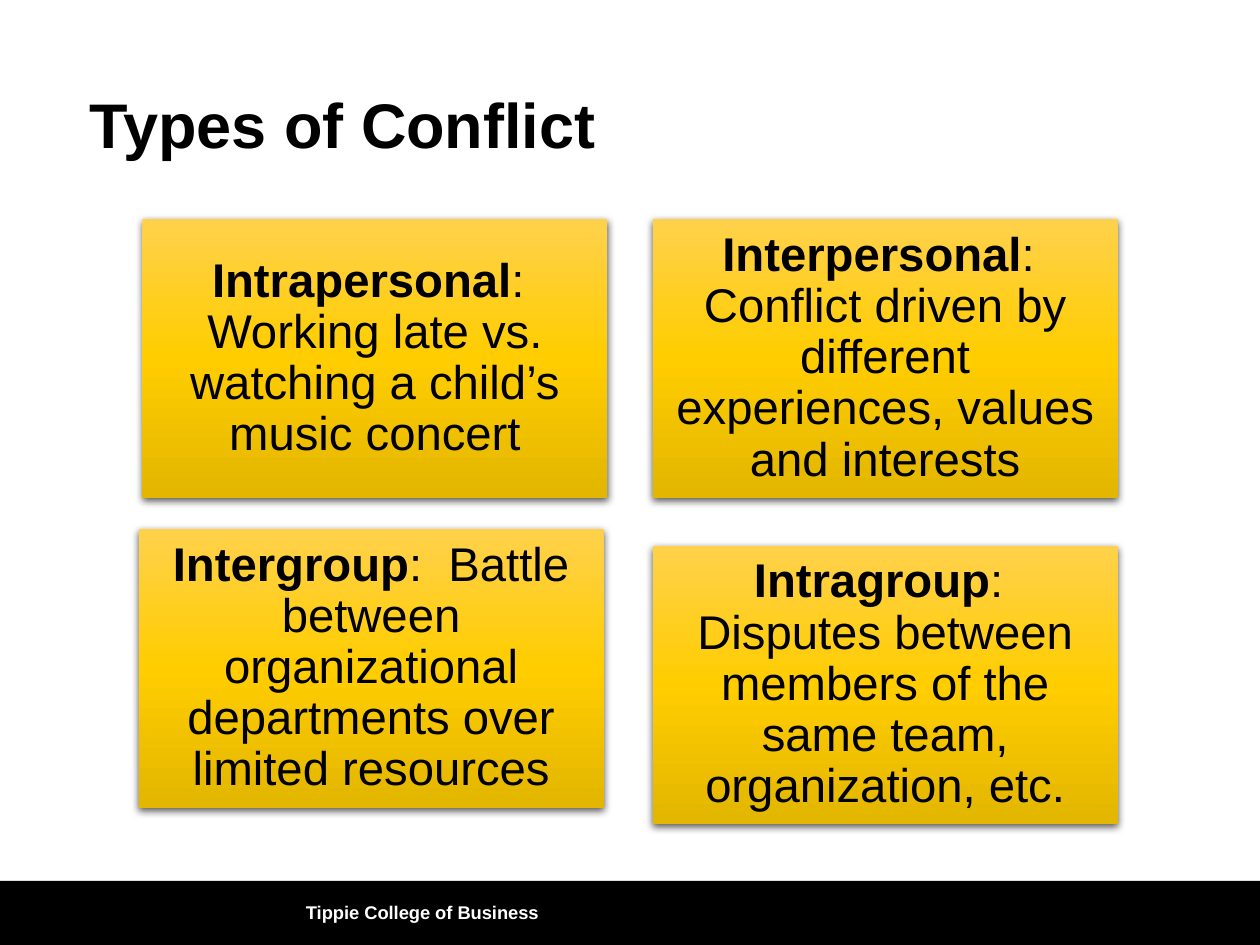
from copy import deepcopy

from lxml.etree import SubElement
from pptx import Presentation
from pptx.dml.color import RGBColor
from pptx.enum.shapes import MSO_SHAPE
from pptx.enum.text import MSO_ANCHOR, PP_ALIGN
from pptx.oxml.ns import qn
from pptx.util import Inches, Pt

BLACK = RGBColor(0, 0, 0)
WHITE = RGBColor(255, 255, 255)
GOLDS = [RGBColor(0xFF, 0xD1, 0x4B), RGBColor(0xFF, 0xCD, 0x00),
         RGBColor(0xE3, 0xB6, 0x00)]
FONT = "Arial"

TITLE = "Types of Conflict"
FOOTER = "Tippie College of Business"
# term, text, column, row, nudge from the grid in inches (x, y)
CARDS = [
    ("Intrapersonal", "Working late vs. watching a child’s music concert",
     0, 0, (0, 0)),
    ("Interpersonal",
     "Conflict driven by different experiences, values and interests",
     1, 0, (0, 0)),
    ("Intergroup",
     "Battle between organizational departments over limited resources",
     0, 1, (-0.03, -0.13)),
    ("Intragroup",
     "Disputes between members of the same team, organization, etc.",
     1, 1, (0, 0)),
]

# Card grid, in inches
LEFT, TOP = 1.13, 1.74
CARD_W, CARD_H = 3.69, 2.21
STEP_X, STEP_Y = 4.05, 2.59
INSET = 0.11
BAR_TOP = 6.99


def style(par, size, color, bold=None):
    font = par.font
    font.name, font.size, font.bold = FONT, Pt(size), bold
    font.color.rgb = color


def add_box(slide, x, y, w, h):
    box = slide.shapes.add_shape(MSO_SHAPE.RECTANGLE, Inches(x), Inches(y),
                                 Inches(w), Inches(h))
    box.shadow.inherit = False
    box.line.fill.background()
    return box


def fill_gold(box):
    box.fill.gradient()
    box.fill.gradient_angle = 270
    stops = box._element.spPr.find(qn("a:gradFill")).find(qn("a:gsLst"))
    stops.append(deepcopy(stops[-1]))
    for i, (stop, gold) in enumerate(zip(box.fill.gradient_stops, GOLDS)):
        stop.color.rgb = gold
        stop.position = i / 2


def add_shadow(box):
    effects = box._element.spPr.find(qn("a:effectLst"))
    shadow = SubElement(effects, qn("a:outerShdw"), blurRad=str(Pt(4.5)),
                        dist=str(Pt(1.5)), dir="5400000", rotWithShape="0")
    color = SubElement(shadow, qn("a:srgbClr"), val=str(BLACK))
    SubElement(color, qn("a:alpha"), val="63000")


def add_card(slide, term, text, col, row, nudge):
    box = add_box(slide, LEFT + col * STEP_X + nudge[0],
                  TOP + row * STEP_Y + nudge[1], CARD_W, CARD_H)
    fill_gold(box)
    add_shadow(box)
    frame = box.text_frame
    frame.word_wrap = True
    frame.vertical_anchor = MSO_ANCHOR.MIDDLE
    frame.margin_left = frame.margin_right = Inches(INSET)
    frame.margin_top = frame.margin_bottom = Inches(INSET)
    par = frame.paragraphs[0]
    par.alignment = PP_ALIGN.CENTER
    par.line_spacing = 0.9
    style(par, 27, BLACK)
    for words, bold in ((term, True), (":  " + text, False)):
        run = par.add_run()
        run.text = words
        run.font.bold = bold


def main():
    deck = Presentation()
    deck.slide_width, deck.slide_height = Inches(10), Inches(7.5)
    slide = deck.slides.add_slide(deck.slide_layouts[5])

    # Footer bar
    bar = add_box(slide, 0, BAR_TOP, 10, 7.5 - BAR_TOP)
    bar.fill.solid()
    bar.fill.fore_color.rgb = BLACK

    # Title
    title = slide.shapes.title
    title.left, title.top = Inches(0.61), Inches(0.54)
    title.width, title.height = Inches(8.62), Inches(0.95)
    title.text_frame.text = TITLE
    title.text_frame.vertical_anchor = MSO_ANCHOR.MIDDLE
    par = title.text_frame.paragraphs[0]
    par.alignment = PP_ALIGN.LEFT
    par.line_spacing = 0.9
    style(par, 36, BLACK, True)

    # Conflict cards
    for card in CARDS:
        add_card(slide, *card)

    # Footer text
    note = slide.shapes.add_textbox(Inches(2.33), Inches(7.04),
                                    Inches(6.86), Inches(0.4))
    note.text_frame.word_wrap = True
    note.text_frame.vertical_anchor = MSO_ANCHOR.MIDDLE
    note.text_frame.text = FOOTER
    style(note.text_frame.paragraphs[0], 10.5, WHITE, True)

    deck.save("out.pptx")


if __name__ == "__main__":
    main()
